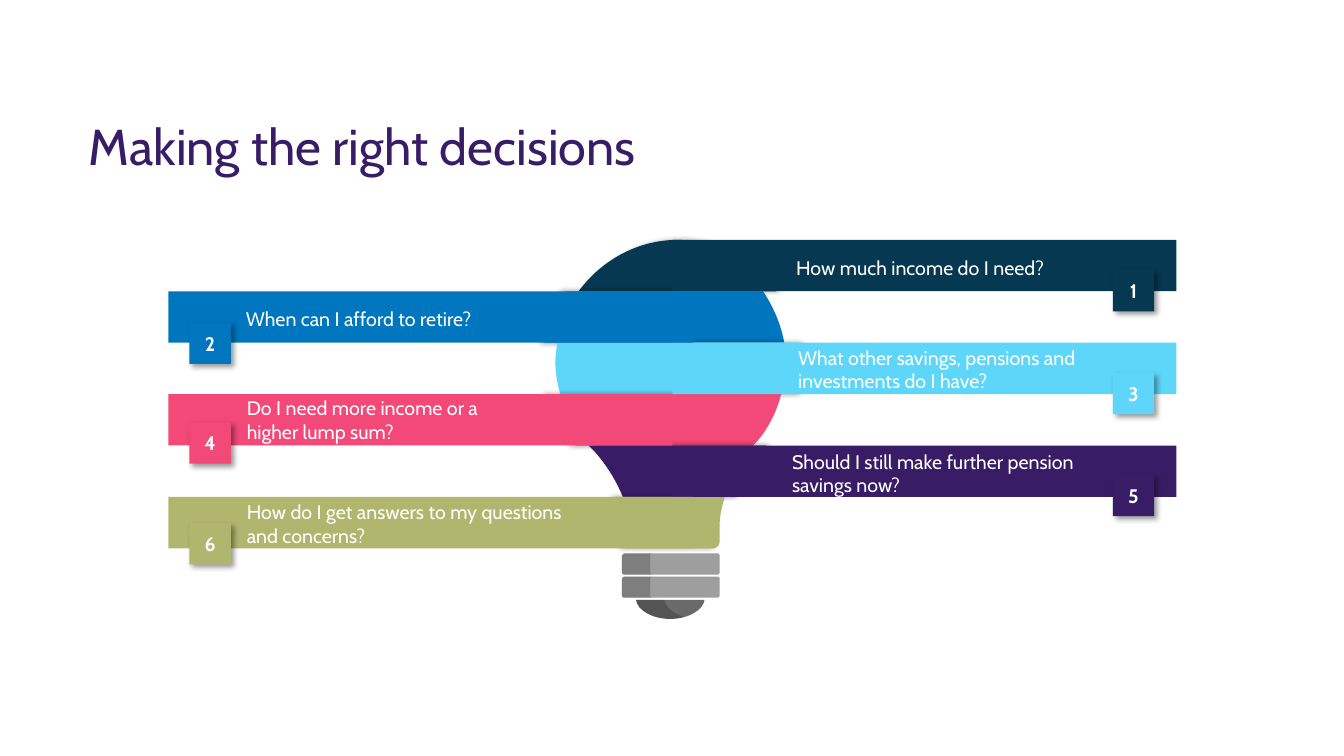
from lxml import etree
from pptx import Presentation
from pptx.dml.color import RGBColor
from pptx.enum import shapes, text
from pptx.oxml.ns import qn
from pptx.util import Inches, Pt

FONT = "Cabin"
COLORS = {
    "navy": "063951", "blue": "0076BE", "sky": "5DD6F9", "pink": "F24979",
    "purple": "391C66", "olive": "B1B66E", "white": "FFFFFF",
    "black": "000000", "ring": "9E9E9E", "tip": "6A6A6A",
}
BAND_TOP, BAND_H = 2.38, 0.51

# Wording, colour, text box (left, offset from band top, width, height),
# badge offset from band top
QUESTIONS = [
    ("How much income do I need?", "navy", (7.8, 0.11, 3.34, 0.57), 0.3),
    ("When can I afford to retire?", "blue", (2.34, 0.11, 2.57, 0.57), 0.31),
    ("What other savings, pensions and investments do I have?", "sky",
     (7.82, -0.02, 3.47, 0.81), 0.3),
    ("Do I need more income or a higher lump sum?", "pink",
     (2.35, -0.03, 2.99, 0.81), 0.28),
    ("Should I still make further pension savings now?", "purple",
     (7.76, -0.01, 3.32, 0.57), 0.29),
    ("How do I get answers to my questions and concerns?", "olive",
     (2.35, -0.02, 3.49, 0.81), 0.26),
]

# Centre of each bulb slice, then its right-hand edge from top to bottom,
# measured from that centre: a start point and line (1) or curve (3) segments
SLICES = [
    (6.72, (0, 0), [[(0.4, 0), (0.76, 0.21), (0.98, 0.51)]]),
    (6.59, (0.98, 0), [[(1.08, 0.15), (1.16, 0.33), (1.19, 0.51)]]),
    (6.72, (1.19, 0), [[(1.2, 0.07), (1.21, 0.13), (1.21, 0.19)],
                       [(1.21, 0.3), (1.19, 0.41), (1.16, 0.51)]]),
    (6.59, (1.16, 0), [[(1.11, 0.19), (1.02, 0.37), (0.88, 0.51)]]),
    (6.72, (0.88, 0), [[(0.82, 0.06)],
                       [(0.67, 0.23), (0.59, 0.39), (0.54, 0.51)]]),
    (6.65, (0.54, 0), [[(0.5, 0.13), (0.49, 0.22), (0.49, 0.25)],
                       [(0.49, 0.44)],
                       [(0.49, 0.48), (0.46, 0.51), (0.42, 0.51)]]),
]


def mirrored(start, segments):
    """Close a right-hand edge with its reflection, from bottom to top."""
    knots = [start] + [seg[-1] for seg in segments]
    left = [[(-knots[-1][0], knots[-1][1])]]
    for knot, seg in zip(knots[-2::-1], reversed(segments)):
        back = [*reversed(seg[:-1]), knot]
        left.append([(-x, y) for x, y in back])
    return segments + left


def paint(sp, color, alpha=None):
    sp.shadow.inherit = False
    sp.line.fill.background()
    sp.fill.solid()
    sp.fill.fore_color.rgb = RGBColor.from_string(COLORS[color])
    if alpha:
        clr = sp._element.spPr.find(qn("a:solidFill"))[0]
        etree.SubElement(clr, qn("a:alpha"), val=str(alpha * 1000))


def add_shadow(sp, angle):
    effects = sp._element.spPr.find(qn("a:effectLst"))
    shadow = etree.SubElement(
        effects, qn("a:outerShdw"), blurRad=str(Pt(4)), dist=str(Pt(3)),
        dir=str(angle * 60000), algn="ctr", rotWithShape="0")
    clr = etree.SubElement(shadow, qn("a:srgbClr"), val=COLORS["black"])
    etree.SubElement(clr, qn("a:alpha"), val="40000")


def add_outline(slide, left, top, start, segments, color, alpha=None):
    """Add a closed freeform whose three-point segments are cubic curves."""
    pts = [(Inches(left + x), Inches(top + y))
           for x, y in [start] + sum(segments, [])]
    builder = slide.shapes.build_freeform(*pts[0])
    builder.add_line_segments(pts[1:], close=True)
    sp = builder.convert_to_shape()
    lines = iter(list(sp._element.iter(qn("a:lnTo"))))
    for seg in segments:
        parts = [next(lines) for _ in seg]
        if len(parts) == 3:
            curve = etree.Element(qn("a:cubicBezTo"))
            parts[0].addprevious(curve)
            for part in parts:
                curve.append(part[0])
                part.getparent().remove(part)
    paint(sp, color, alpha)
    return sp


def add_box(slide, left, top, width, height, color):
    sp = slide.shapes.add_shape(shapes.MSO_SHAPE.RECTANGLE, Inches(left),
                                Inches(top), Inches(width), Inches(height))
    paint(sp, color)
    return sp


def add_run(p, wording, size, color, bold=False):
    r = p.add_run()
    r.text = wording
    r.font.name = FONT
    r.font.size = Pt(size)
    r.font.bold = bold
    r.font.color.rgb = RGBColor.from_string(COLORS[color])


def add_title(slide, left, top, width, height):
    title = slide.shapes.title
    title.left, title.top = Inches(left), Inches(top)
    title.width, title.height = Inches(width), Inches(height)
    tf = title.text_frame
    tf.margin_left = tf.margin_right = tf.margin_top = tf.margin_bottom = 0
    tf.vertical_anchor = text.MSO_ANCHOR.MIDDLE
    p = tf.paragraphs[0]
    p.alignment = text.PP_ALIGN.LEFT
    add_run(p, "Making the right decisions", 36, "purple")


def add_slice(slide, index, top):
    centre, start, segments = SLICES[index]
    sp = add_outline(slide, centre, top, start, mirrored(start, segments),
                     QUESTIONS[index][1])
    add_shadow(sp, 180 * (index % 2))


def add_ring(slide, left, top):
    left_side = [[(0.01, 0.21), (0, 0.2), (0, 0.19)], [(0, 0.02)],
                 [(0, 0.01), (0.01, 0), (0.02, 0)]]
    ring = left_side + [
        [(0.95, 0)], [(0.96, 0), (0.97, 0.01), (0.97, 0.02)],
        [(0.97, 0.19)], [(0.97, 0.2), (0.96, 0.21), (0.95, 0.21)]]
    shade = left_side + [
        [(0.3, 0)], [(0.29, 0), (0.28, 0.01), (0.28, 0.02)],
        [(0.28, 0.19)], [(0.28, 0.2), (0.29, 0.21), (0.3, 0.21)]]
    add_outline(slide, left, top, (0.02, 0.21), ring, "ring")
    add_outline(slide, left, top, (0.02, 0.21), shade, "black", 20)


def add_tip(slide, left, top):
    left_edge = [(0.01, 0.1), (0.16, 0.19), (0.34, 0.19)]
    tip = [left_edge, [(0.52, 0.19), (0.67, 0.1), (0.68, 0)]]
    shade = [left_edge, [(0.39, 0.19), (0.44, 0.18), (0.48, 0.17)],
             [(0.37, 0.14), (0.29, 0.07), (0.28, 0)]]
    add_outline(slide, left, top, (0, 0), tip, "tip")
    add_outline(slide, left, top, (0, 0), shade, "black", 20)


def add_bulb(slide, top):
    add_slice(slide, 0, top)
    for offset in (3.11, 3.34):
        add_ring(slide, 6.17, top + offset)
    add_tip(slide, 6.31, top + 3.57)
    for i in range(1, len(SLICES)):
        add_slice(slide, i, top + i * BAND_H)


def add_banner(slide, index, top):
    """Add a coloured band with its numbered badge and question."""
    wording, color, (x, offset, w, h), drop = QUESTIONS[index]
    on_left = index % 2 == 1
    left, badge_left = (1.67, 1.88) if on_left else (6.67, 11.04)
    width = 5.21 if color in ("blue", "olive") else 5
    add_box(slide, left, top, width, BAND_H, color)

    badge = add_box(slide, badge_left, top + drop, 0.41, 0.41, color)
    add_shadow(badge, 45)
    badge.text_frame.vertical_anchor = text.MSO_ANCHOR.MIDDLE
    p = badge.text_frame.paragraphs[0]
    p.alignment = text.PP_ALIGN.CENTER
    add_run(p, str(index + 1), 14, "white", bold=True)

    box = slide.shapes.add_textbox(Inches(x), Inches(top + offset),
                                   Inches(w), Inches(h))
    tf = box.text_frame
    tf.word_wrap = color != "blue"
    tf.auto_size = text.MSO_AUTO_SIZE.SHAPE_TO_FIT_TEXT
    add_run(tf.paragraphs[0], wording, 14, "white")


def main():
    prs = Presentation()
    prs.slide_width, prs.slide_height = Inches(40 / 3), Inches(7.5)
    slide = prs.slides.add_slide(prs.slide_layouts[5])
    add_title(slide, 0.88, 1.16, 11.58, 0.57)
    add_bulb(slide, BAND_TOP)
    for i in (2, 0, 1, 3, 4, 5):
        add_banner(slide, i, BAND_TOP + i * BAND_H)
    prs.save("out.pptx")


if __name__ == "__main__":
    main()
